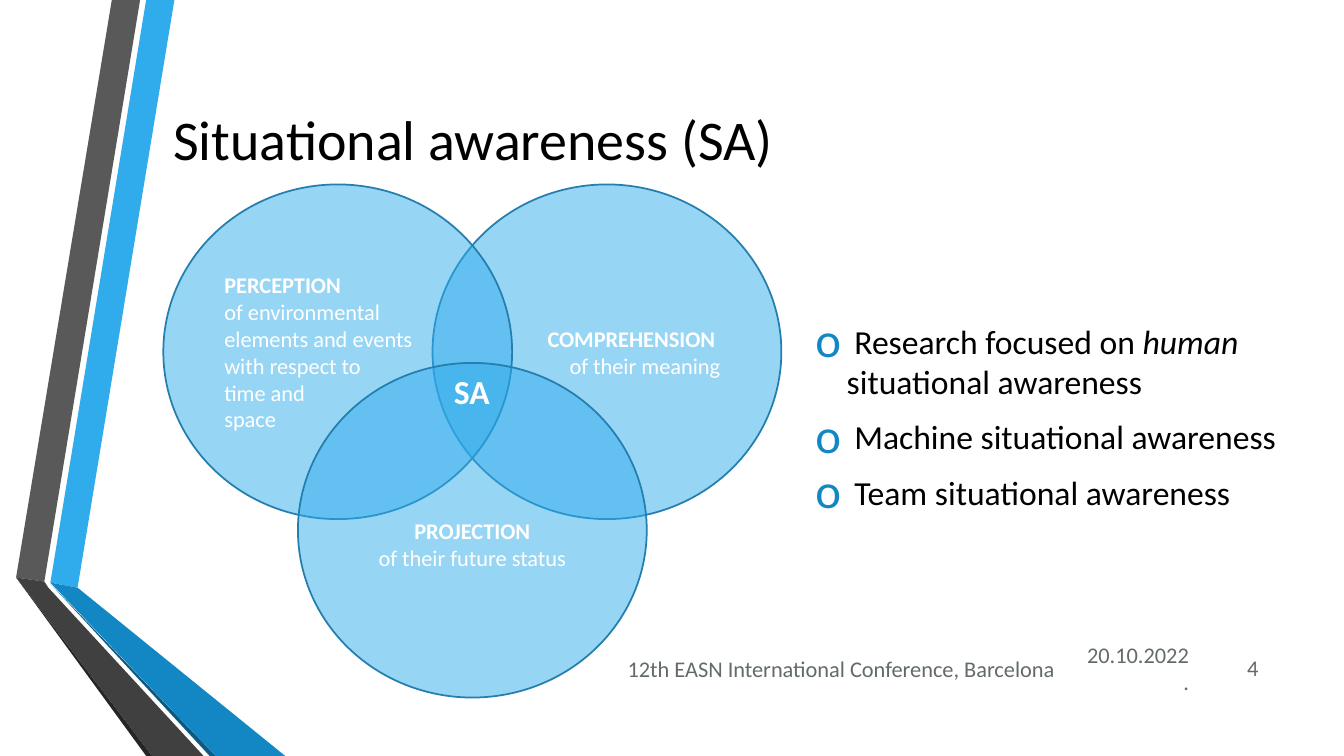
"""Builds the situational awareness slide: ribbon, three-circle diagram and bullets."""
import pptx
import pptx.dml.color
import pptx.enum.shapes
import pptx.enum.text
import pptx.oxml
import pptx.oxml.ns
import pptx.util

Inches, Pt = pptx.util.Inches, pptx.util.Pt
PP, MSO = pptx.enum.text.PP_ALIGN, pptx.enum.text.MSO_ANCHOR
W, H = 13.33, 7.5
NS = pptx.oxml.ns.nsdecls("a")


def rgb(code):
    return pptx.dml.color.RGBColor.from_string(code)


def write(sp, paragraphs, size, color, align=PP.LEFT, anchor=MSO.MIDDLE):
    """Fills a shape; a paragraph is a list of (text, font attributes)."""
    tf = sp.text_frame
    tf.word_wrap = True
    tf.vertical_anchor = anchor
    for i, runs in enumerate(paragraphs):
        p = tf.add_paragraph() if i else tf.paragraphs[0]
        p.alignment = align
        for text, style in runs:
            if text == "\n":
                p.add_line_break()
                continue
            r = p.add_run()
            r.text = text
            r.font.color.rgb = rgb(color)
            for name, value in {"name": "Calibri", "size": Pt(size), **style}.items():
                setattr(r.font, name, value)
    for br in tf._txBody.iter(pptx.oxml.ns.qn("a:br")):
        br.append(pptx.oxml.parse_xml(f'<a:rPr {NS} sz="{size * 100}"/>'))
    return tf


prs = pptx.Presentation()
prs.slide_width, prs.slide_height = Inches(W), Inches(H)
s = prs.slides.add_slide(prs.slide_layouts[6])

ribbon = [
    ("30ACEC", [(0.5, 5.78), (0.77, 5.83), (1.73, 0), (1.45, 0)]),
    ("595959", [(1.39, 0), (1.11, 0), (0.16, 5.73), (0.44, 5.77)]),
    ("262626", [(0.16, 5.73), (1.45, H), (1.51, H)]),
    ("0C5A82", [(0.5, 5.79), (2.08, H), (2.14, H)]),
    ("1287C3", [(0.5, 5.78), (2.14, H), (2.83, H), (0.77, 5.83)]),
    ("404040", [(0.16, 5.73), (1.51, H), (2.02, H), (0.48, 5.83), (0.44, 5.77)]),
]
for color, points in ribbon:
    (x0, y0), *rest = [(Inches(x), Inches(y)) for x, y in points]
    builder = s.shapes.build_freeform(x0, y0)
    builder.add_line_segments(rest, close=True)
    sp = builder.convert_to_shape()
    sp.shadow.inherit = False
    sp.fill.solid()
    sp.fill.fore_color.rgb = rgb(color)
    sp.line.fill.background()

bold, plain = {"bold": True}, {"bold": False}
left, top, dx, dy = 1.62, 1.83, 1.335, 1.77
circles = [
    (2, 0, PP.RIGHT, 0.05,
     [[("COMPREHENSION ", bold), ("\n", {}), ("of their meaning", plain)]]),
    (0, 0, PP.LEFT, 0.05,
     [[("PERCEPTION ", bold), ("\n", {}),
       ("of environmental elements and events with respect to", plain)],
      [("time and", plain)], [("space", plain)]]),
    (1, 1, PP.CENTER, 0.32,
     [[("PROJECTION", bold)], [("of their future status", plain)]]),
]
for col, row, align, inset, paragraphs in circles:
    sp = s.shapes.add_shape(pptx.enum.shapes.MSO_SHAPE.OVAL, Inches(left + col * dx),
                            Inches(top + row * dy), Inches(3.46), Inches(3.32))
    sp.shadow.inherit = False
    sp.fill.solid()
    sp.fill.fore_color.rgb = rgb("30ACEC")
    sp.fill._xPr.find(".//" + pptx.oxml.ns.qn("a:srgbClr")).append(
        pptx.oxml.parse_xml(f'<a:alpha {NS} val="50000"/>'))
    sp.line.color.rgb = rgb("247FAF")
    sp.line.width = Pt(1.25)
    write(sp, paragraphs, 16, "FFFFFF", align).margin_top = Inches(inset)

grey = "636A6C"
bullets = [
    [(" Research focused on ", {}), ("human", {"italic": True}),
     (" situational awareness", {})],
    [(" Machine situational awareness", {})],
    [(" Team situational awareness", {})],
]
texts = [
    (1.62, 0.41, 10.96, 1.92, [[("Situational awareness (SA)", {})]],
     40, "000000", PP.LEFT, MSO.MIDDLE),
    (4.35, 3.63, 0.66, 0.5, [[("SA", bold)]], 24, "FFFFFF", PP.CENTER, MSO.TOP),
    (10.64, 6.43, 1.25, 0.4, [[("20.10.2022.", {})]], 16, grey, PP.RIGHT, MSO.MIDDLE),
    (2.81, 6.43, 7.75, 0.4, [[("12th EASN International Conference, Barcelona", {})]],
     16, grey, PP.RIGHT, MSO.MIDDLE),
    (11.98, 6.42, 0.6, 0.4, [[("4", {})]], 16, grey, PP.RIGHT, MSO.MIDDLE),
    (7.99, 2.17, 4.83, 3.92, bullets, 24, "000000", PP.LEFT, MSO.MIDDLE),
]
for x, y, w, h, *content in texts:
    sp = s.shapes.add_textbox(Inches(x), Inches(y), Inches(w), Inches(h))
    tf = write(sp, *content)

for p in tf.paragraphs:
    p.space_before, p.space_after = Pt(4.8), Pt(6)
    pPr = p._p.get_or_add_pPr()
    pPr.set("marL", str(Inches(0.31)))
    pPr.set("indent", str(-Inches(0.31)))
    for tag in ('buClr {}><a:srgbClr val="1287C3"/></a:buClr>', 'buSzPct {} val="145000"/>',
                'buFont {} typeface="Calibri"/>', 'buChar {} char="o"/>'):
        pPr.append(pptx.oxml.parse_xml("<a:" + tag.format(NS)))

prs.save("out.pptx")
